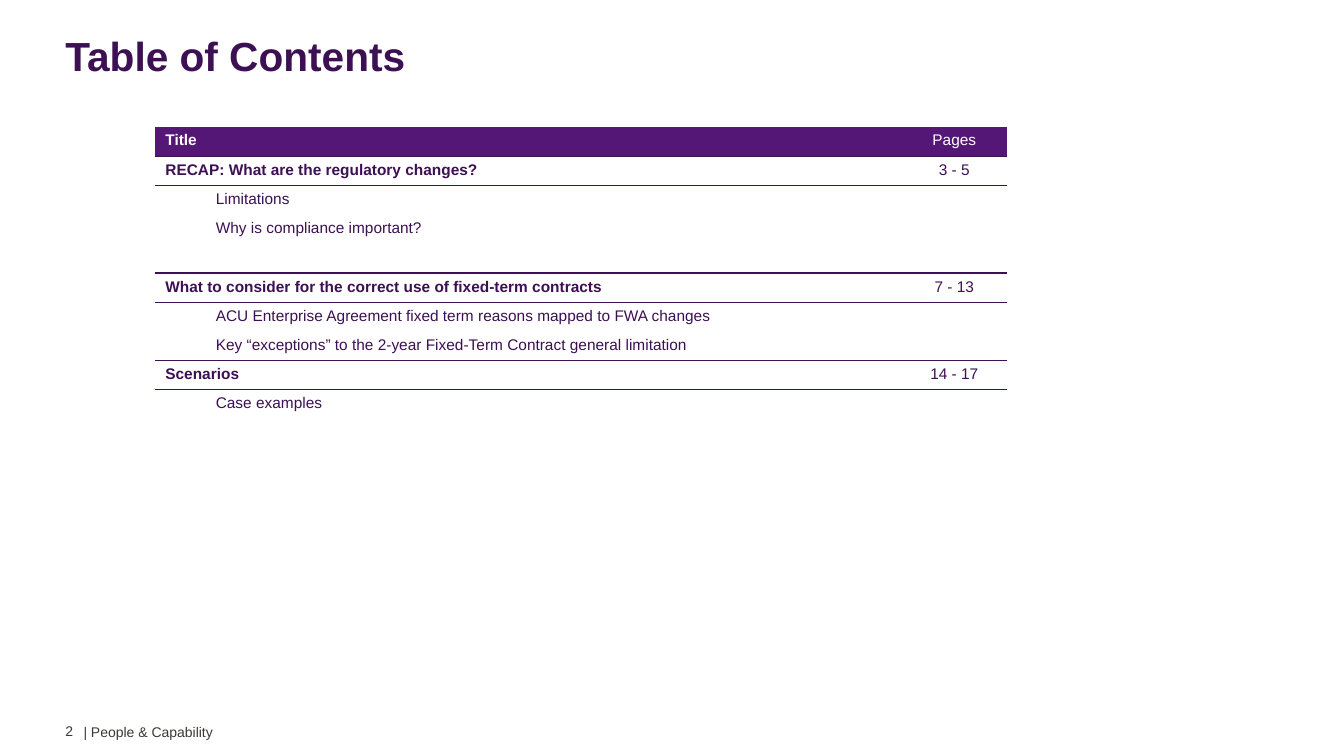
from dataclasses import dataclass
from lxml.etree import SubElement
from pptx import Presentation
from pptx.dml.color import RGBColor
from pptx.enum.text import MSO_ANCHOR, PP_ALIGN
from pptx.oxml import parse_xml
from pptx.oxml.ns import nsdecls, qn
from pptx.util import Pt

PX = 9144
NO_STYLE = "{2D5ABB26-0587-4C30-8999-92F81FD0307C}"


@dataclass(frozen=True)
class Theme:
    font: str = "Arial"
    ink: str = "3C1053"
    header: str = "551775"
    white: str = "FFFFFF"
    footer: str = "3D3935"
    title_size: int = 29
    table_size: int = 11
    footer_size: int = 10


class ContentsSlide:
    def __init__(self, presentation, theme):
        self.theme = theme
        self.slide = presentation.slides.add_slide(presentation.slide_layouts[6])

    def format_text(self, paragraph, size, color, bold=False):
        for run in paragraph.runs:
            run.font.name = self.theme.font
            run.font.size = Pt(size)
            run.font.bold = bold
            run.font.color.rgb = RGBColor.from_string(color)

    def add_text(self, text, box, size, color, bold=False, anchor=MSO_ANCHOR.TOP, spacing=1.0):
        shape = self.slide.shapes.add_textbox(*(length * PX for length in box))
        text_frame = shape.text_frame
        text_frame.word_wrap = True
        text_frame.vertical_anchor = anchor
        text_frame.text = text
        paragraph = text_frame.paragraphs[0]
        paragraph.line_spacing = spacing
        self.format_text(paragraph, size, color, bold)

    def add_border(self, cell, edge):
        line = parse_xml(
            f'<a:{edge} {nsdecls("a")} w="{Pt(1)}"><a:solidFill>'
            f'<a:srgbClr val="{self.theme.ink}"/></a:solidFill></a:{edge}>'
        )
        cell._tc.get_or_add_tcPr().insert(0, line)

    def fill_cell(self, cell, text, color, bold, indent, centred):
        cell.text_frame.text = text
        paragraph = cell.text_frame.paragraphs[0]
        if centred:
            paragraph.alignment = PP_ALIGN.CENTER
        if indent:
            paragraph._p.get_or_add_pPr().set("marL", str(indent * PX))
        if text:
            self.format_text(paragraph, self.theme.table_size, color, bold)
        else:
            ending = SubElement(paragraph._p, qn("a:endParaRPr"))
            ending.set("sz", str(self.theme.table_size * 100))

    def add_contents_table(self, left, top, widths, row_height, rows):
        frame = self.slide.shapes.add_table(
            len(rows), len(widths), left * PX, top * PX,
            sum(widths) * PX, len(rows) * row_height * PX,
        )
        table = frame.table
        table.first_row = table.horz_banding = False
        table._tbl.tblPr.find(qn("a:tableStyleId")).text = NO_STYLE
        for column, width in zip(table.columns, widths):
            column.width = width * PX
        for index, (title, pages) in enumerate(rows):
            table.rows[index].height = row_height * PX
            is_header = index == 0
            is_section = bool(pages)
            ends_section = index + 1 < len(rows) and bool(rows[index + 1][1])
            color = self.theme.white if is_header else self.theme.ink
            title_cell, pages_cell = table.cell(index, 0), table.cell(index, 1)
            indent = 50 if title and not is_section else 0
            self.fill_cell(title_cell, title, color, is_section, indent, False)
            self.fill_cell(pages_cell, pages, color, False, 0, True)
            for cell in (title_cell, pages_cell):
                if is_header:
                    cell.fill.solid()
                    cell.fill.fore_color.rgb = RGBColor.from_string(self.theme.header)
                else:
                    cell.fill.background()
                if ends_section:
                    self.add_border(cell, "lnB")
                if is_section and not is_header:
                    self.add_border(cell, "lnT")


CONTENTS = [
    ("Title", "Pages"),
    ("RECAP: What are the regulatory changes?", "3 - 5"),
    ("Limitations", ""),
    ("Why is compliance important?", ""),
    ("", ""),
    ("What to consider for the correct use of fixed-term contracts", "7 - 13"),
    ("ACU Enterprise Agreement fixed term reasons mapped to FWA changes", ""),
    ("Key “exceptions” to the 2-year Fixed-Term Contract general limitation", ""),
    ("Scenarios", "14 - 17"),
    ("Case examples", ""),
    ("", ""),
    ("", ""),
]


def main():
    presentation = Presentation()
    presentation.slide_width = 1333 * PX
    presentation.slide_height = 750 * PX
    theme = Theme()
    contents = ContentsSlide(presentation, theme)
    contents.add_text("2", (55, 712, 49, 27), theme.footer_size, theme.footer)
    contents.add_text("| People & Capability", (73, 713, 338, 27), theme.footer_size, theme.footer)
    contents.add_text("Table of Contents", (55, 31, 1226, 54), theme.title_size, theme.ink,
                      bold=True, anchor=MSO_ANCHOR.MIDDLE, spacing=0.9)
    contents.add_contents_table(154, 126, (740, 105), 29, CONTENTS)
    presentation.save("out.pptx")


if __name__ == "__main__":
    main()
